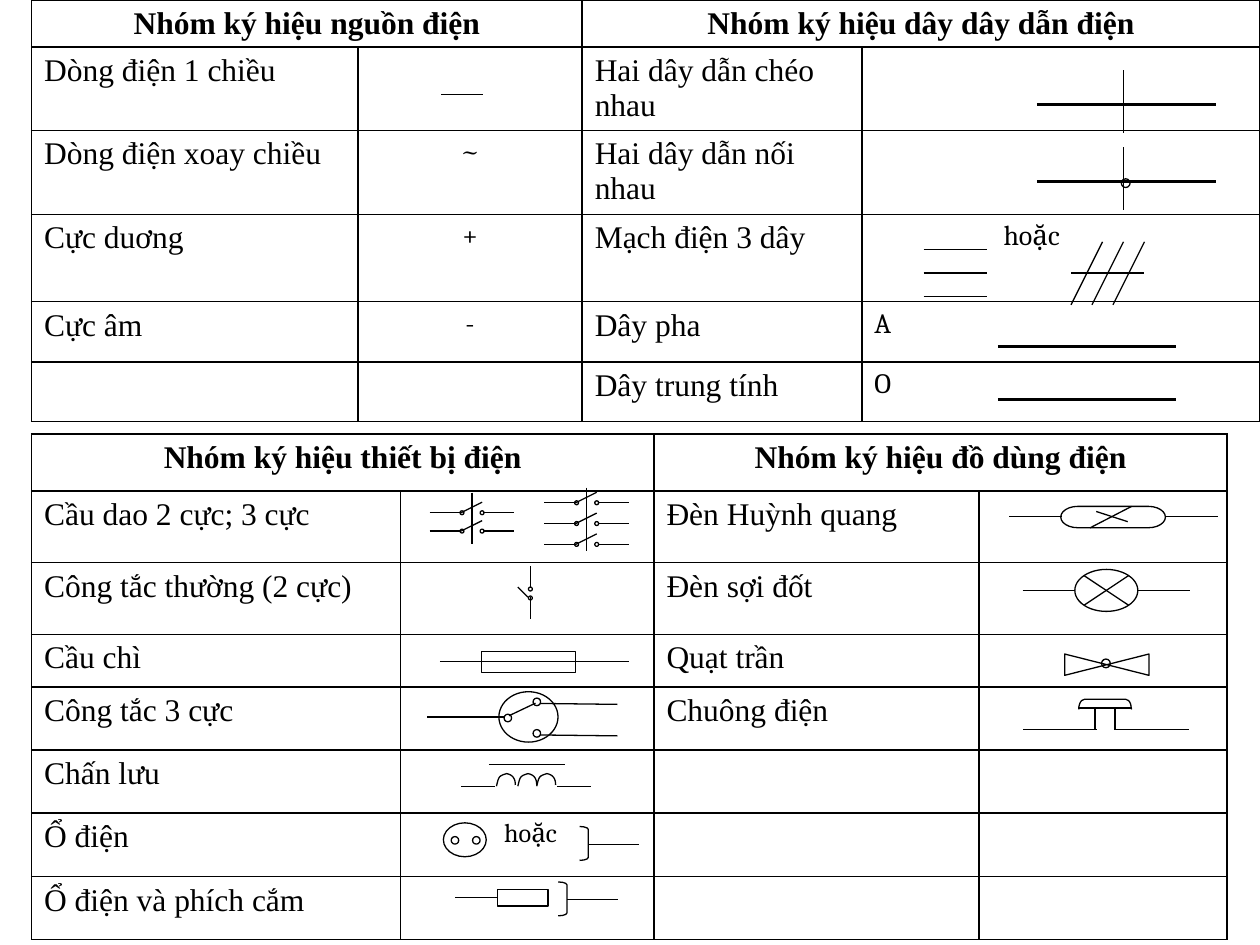
from itertools import accumulate

from lxml import etree
from pptx import Presentation
from pptx.dml.color import RGBColor
from pptx.enum.shapes import MSO_CONNECTOR, MSO_SHAPE
from pptx.enum.text import PP_ALIGN
from pptx.oxml.ns import qn
from pptx.util import Pt

BLACK = RGBColor(0x00, 0x00, 0x00)
THIN, THICK = 0.75, 1.75
STRAIGHT = MSO_CONNECTOR.STRAIGHT
CENTER, LEFT = PP_ALIGN.CENTER, PP_ALIGN.LEFT
ELLIPSE, RECTANGLE = MSO_SHAPE.OVAL, MSO_SHAPE.RECTANGLE
BRACKET, TERMINATOR = MSO_SHAPE.RIGHT_BRACKET, MSO_SHAPE.FLOWCHART_TERMINATOR
JUNCTION, COLLATE = MSO_SHAPE.FLOWCHART_SUMMING_JUNCTION, MSO_SHAPE.FLOWCHART_COLLATE

HEADER = dict(name="Times New Roman", size=Pt(18), bold=True)
LABEL = dict(name="Times New Roman", size=Pt(18), bold=False)
SYMBOL = dict(name="Cambria", size=Pt(16), bold=False)
SMALL_SYMBOL = dict(name="Cambria", size=Pt(15), bold=False)

SOURCES_AND_WIRES = [
    ["Nhóm ký hiệu nguồn điện", "", "Nhóm ký hiệu dây dây dẫn điện", ""],
    ["Dòng điện 1 chiều", "", "Hai dây dẫn chéo nhau", ""],
    ["Dòng điện xoay chiều", "~", "Hai dây dẫn nối nhau", ""],
    ["Cực duơng", "+", "Mạch điện 3 dây", "hoặc"],
    ["Cực âm", "-", "Dây pha", "A"],
    ["", "", "Dây trung tính", "O"],
]
DEVICES_AND_APPLIANCES = [
    ["Nhóm ký hiệu thiết bị điện", "", "Nhóm ký hiệu đồ dùng điện", ""],
    ["Cầu dao 2 cực; 3 cực", "", "Đèn Huỳnh quang", ""],
    ["Công tắc thường (2 cực)", "", "Đèn sợi đốt", ""],
    ["Cầu chì", "", "Quạt trần", ""],
    ["Công tắc 3 cực", "", "Chuông điện", ""],
    ["Chấn lưu", "", "", ""],
    ["Ổ điện", "hoặc", "", ""],
    ["Ổ điện và phích cắm", "", "", ""],
]


# Tables
def write_cell(cell, text, text_format, alignment):
    properties = cell._tc.get_or_add_tcPr()
    for side in ("a:lnL", "a:lnR", "a:lnT", "a:lnB"):
        border = etree.SubElement(properties, qn(side), w=str(Pt(1)))
        fill = etree.SubElement(border, qn("a:solidFill"))
        etree.SubElement(fill, qn("a:srgbClr"), val=str(BLACK))
    cell.fill.background()
    cell.margin_bottom = Pt(2.5)
    if text:
        paragraph = cell.text_frame.paragraphs[0]
        paragraph.alignment = alignment
        run = paragraph.add_run()
        run.text = text
        for name, value in text_format.items():
            setattr(run.font, name, value)
        run.font.color.rgb = BLACK


def add_symbol_table(slide, left, top, widths, heights, rows, symbol_format):
    """Draw the table and return a function giving the corner of a cell."""
    table = slide.shapes.add_table(len(rows), len(widths), Pt(left), Pt(top),
                                   Pt(sum(widths)), Pt(sum(heights))).table
    table.first_row = table.horz_banding = False
    for column, width in zip(table.columns, widths):
        column.width = Pt(width)
    for row, height in zip(table.rows, heights):
        row.height = Pt(height)
    for i, texts in enumerate(rows):
        for j, text in enumerate(texts):
            text_format = HEADER if i == 0 else symbol_format if j % 2 else LABEL
            alignment = CENTER if i == 0 or j == 1 else LEFT
            write_cell(table.cell(i, j), text, text_format, alignment)
    for j in (0, 2):
        table.cell(0, j).merge(table.cell(0, j + 1))
    lefts = list(accumulate(widths, initial=left))
    tops = list(accumulate(heights, initial=top))
    return table, lambda i, j: (lefts[j], tops[i])


# Drawing parts, placed relative to the corner of a box
def add_line(slide, box, x1, y1, x2, y2, width=THIN):
    left, top = box
    line = slide.shapes.add_connector(STRAIGHT, Pt(left + x1), Pt(top + y1),
                                      Pt(left + x2), Pt(top + y2))
    line.line.color.rgb = BLACK
    line.line.width = Pt(width)
    etree.SubElement(line._element.spPr, qn("a:effectLst"))
    return line


def outline(shape):
    shape.shadow.inherit = False
    shape.fill.background()
    shape.line.color.rgb = BLACK
    shape.line.width = Pt(THIN)


def add_outline(slide, box, kind, x, y, width, height, rotation=0, adjustment=None):
    shape = slide.shapes.add_shape(kind, Pt(box[0] + x), Pt(box[1] + y), Pt(width), Pt(height))
    outline(shape)
    shape.rotation = rotation
    if adjustment is not None:
        shape.adjustments[0] = adjustment
    return shape


def add_contact(slide, box, x, y, size=2.2):
    add_outline(slide, box, ELLIPSE, x - size / 2, y - size / 2, size, size)


def add_coil_turn(slide, box, x, y):
    curves = [((0, 7.2), (1.4, 1.4), (1.4, 1.4), (5.8, 0)),
              ((5.8, 0), (9.4, 0.7), (10.8, 2.9), (10.8, 6.5))]
    points = []
    for curve in curves:
        for t in (step / 8 for step in range(9)):
            weights = ((1 - t) ** 3, 3 * t * (1 - t) ** 2, 3 * t * t * (1 - t), t ** 3)
            points.append(tuple(Pt(offset + sum(w * p[axis] for w, p in zip(weights, curve)))
                                for axis, offset in enumerate((box[0] + x, box[1] + y))))
    builder = slide.shapes.build_freeform(*points[0])
    builder.add_line_segments(points[1:], close=False)
    outline(builder.convert_to_shape())


# Wire symbols
def draw_crossing(slide, box, y, joined=False):
    add_line(slide, box, 100, y, 202.3, y, THICK)
    add_line(slide, box, 149.7, y - 19.5, 149.7, y + 16.5)
    if joined:
        add_contact(slide, box, 150.8, y + 1, 5)


def draw_three_wires(slide, box):
    for i in range(3):
        y, x = 20.2 + 13.3 * i, 119.5 + 12 * i
        add_line(slide, box, 35.3, y, 71.3, y)
        add_line(slide, box, x, 51.7, x + 18, 15.7)
    add_line(slide, box, 119.5, 33.6, 161.3, 33.6)


# Device symbols
def draw_knife_switch(slide, box, x, pole_heights, bar):
    for y in pole_heights:
        add_line(slide, box, x, y, x + 18, y)
        add_line(slide, box, x + 18, y, x + 30, y - 6)
        add_line(slide, box, x + 30.5, y, x + 48.5, y)
        add_contact(slide, box, x + 18.5, y)
        add_contact(slide, box, x + 30, y)
    add_line(slide, box, x + 24.2, bar[0], x + 24.2, bar[1])


def draw_switch(slide, box):
    add_line(slide, box, 74.1, 1.8, 74.1, 14)
    add_line(slide, box, 74.1, 19.8, 74.1, 32)
    add_line(slide, box, 66.9, 14, 72.7, 19.8)
    for y in (15.1, 20.2):
        add_contact(slide, box, 74.1, y)


def draw_fuse(slide, box):
    add_outline(slide, box, RECTANGLE, 46, 9.7, 54, 12)
    add_line(slide, box, 22.3, 15.7, 130.3, 15.7)


def draw_three_way_switch(slide, box):
    add_outline(slide, box, ELLIPSE, 56.1, 2.8, 33.8, 28.8)
    add_line(slide, box, 15.1, 17.2, 59, 17.2)
    for y in (9.5, 27.5):
        add_line(slide, box, 79.9, y, 123.8, y + 0.5)
    for x, y in ((77.8, 8.6), (77.8, 26.6), (61.2, 17.8)):
        add_contact(slide, box, x, y, 4.3)
    add_line(slide, box, 61.9, 16.5, 77, 9.3)


def draw_ballast(slide, box):
    add_line(slide, box, 50.4, 8.5, 93.6, 8.5)
    for x in (54.7, 66.9, 77.7):
        add_coil_turn(slide, box, x, 13.6)
    for x in (34.5, 89.2):
        add_line(slide, box, x, 20.8, x + 19.5, 20.8)


def draw_bracket_outlet(slide, box, x, y):
    add_outline(slide, box, BRACKET, x, y, 5, 19.4, adjustment=0.33)
    add_line(slide, box, x + 5, y + 10.1, x + 34, y + 10.1)


def draw_socket(slide, box):
    add_outline(slide, box, ELLIPSE, 24.4, 5.7, 24.5, 19.4)
    for x in (31, 43.2):
        add_contact(slide, box, x, 15.7, 4.3)
    draw_bracket_outlet(slide, box, 102.2, 7.8)


def draw_plug(slide, box):
    body = add_outline(slide, box, RECTANGLE, 55.4, 7.3, 28.8, 9.4)
    add_line(slide, box, 55.4, 12, 30.9, 12).begin_connect(body, 1)
    draw_bracket_outlet(slide, box, 90, 3)


# Appliance symbols
def draw_fluorescent_lamp(slide, box):
    add_outline(slide, box, TERMINATOR, 46.7, 8.9, 59.8, 12.2)
    for x in (17.2, 106.5):
        add_line(slide, box, x, 14.8, x + 30.2, 14.8)
    add_line(slide, box, 84.9, 17.6, 66.9, 11.8)
    add_line(slide, box, 87.1, 8.9, 63.3, 21.2)


def draw_bulb(slide, box):
    add_outline(slide, box, JUNCTION, 54.7, 3.9, 36, 24)
    for x in (24.9, 90.7):
        add_line(slide, box, x, 16, x + 30, 16)


def draw_fan(slide, box):
    add_outline(slide, box, COLLATE, 66.9, -6.8, 12.2, 48.2, rotation=270)
    add_contact(slide, box, 72.5, 16.6, 5)


def draw_bell(slide, box):
    for x in (25.1, 78):
        add_line(slide, box, x, 24.4, x + 42.2, 24.4)
    for x in (66.2, 77.7):
        add_line(slide, box, x, 24.4, x, 12.1)
    add_line(slide, box, 56.8, 12.1, 87.1, 12.1)
    add_outline(slide, box, BRACKET, 69.1, -5.1, 5.8, 30.2, rotation=270, adjustment=0.56)


def draw_sources_and_wires(slide, left, top):
    table, corner = add_symbol_table(slide, left, top, [186.5, 128.2, 159.8, 227.5],
                                     [27, 47.5, 48, 50, 34.5, 34], SOURCES_AND_WIRES, SYMBOL)
    table.cell(3, 3).margin_left = Pt(81)
    add_line(slide, corner(1, 1), 47.5, 27, 71.3, 27)
    draw_crossing(slide, corner(1, 3), 32.8)
    draw_crossing(slide, corner(2, 3), 29.2, joined=True)
    draw_three_wires(slide, corner(3, 3))
    for row, y in ((4, 25.5), (5, 21.2)):
        add_line(slide, corner(row, 3), 77.7, y, 179.3, y, THICK)


def draw_devices_and_appliances(slide, left, top):
    table, corner = add_symbol_table(slide, left, top, [211, 144.7, 185.8, 141.8],
                                     [32.5, 41, 41, 30, 36, 36, 36.5, 36],
                                     DEVICES_AND_APPLIANCES, SMALL_SYMBOL)
    table.cell(6, 1).margin_left = Pt(11)
    draw_knife_switch(slide, corner(1, 1), 16.5, (12.5, 23), (1, 30.5))
    draw_knife_switch(slide, corner(1, 1), 82, (6.8, 18.7, 30.6), (-1.9, 34.1))
    devices = [draw_switch, draw_fuse, draw_three_way_switch, draw_ballast, draw_socket, draw_plug]
    appliances = [draw_fluorescent_lamp, draw_bulb, draw_fan, draw_bell]
    for column, first_row, symbols in ((1, 2, devices), (3, 1, appliances)):
        for row, draw in enumerate(symbols, first_row):
            draw(slide, corner(row, column))


def main():
    presentation = Presentation()
    presentation.slide_width, presentation.slide_height = Pt(720), Pt(540)
    slide = presentation.slides.add_slide(presentation.slide_layouts[6])
    draw_sources_and_wires(slide, 18, 0)
    draw_devices_and_appliances(slide, 18, 248)
    presentation.save("out.pptx")


if __name__ == "__main__":
    main()
